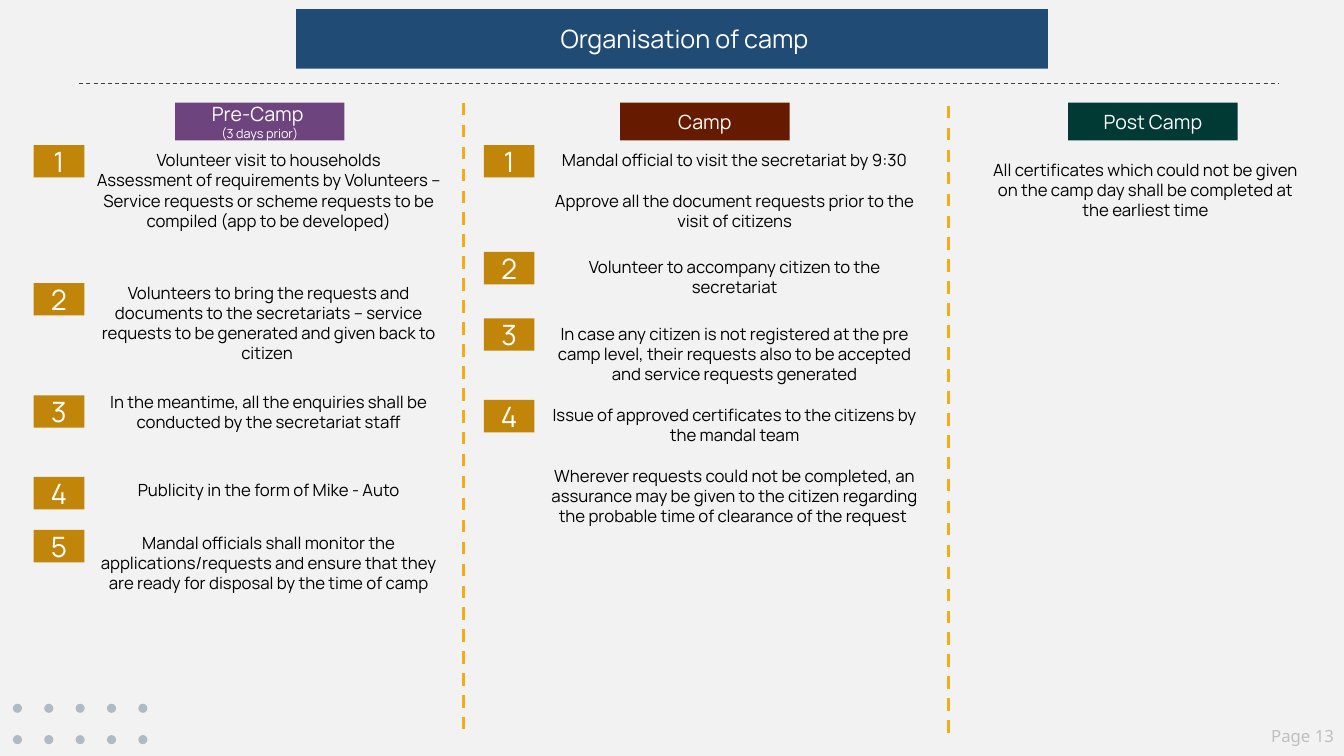
from lxml import etree
from pptx import Presentation
from pptx.dml.color import RGBColor
from pptx.enum.dml import MSO_LINE
from pptx.enum.shapes import MSO_CONNECTOR, MSO_SHAPE
from pptx.enum.text import MSO_ANCHOR, MSO_AUTO_SIZE, PP_ALIGN
from pptx.oxml.ns import qn
from pptx.util import Pt

RECTANGLE, OVAL = MSO_SHAPE.RECTANGLE, MSO_SHAPE.OVAL
STRAIGHT, DASH = MSO_CONNECTOR.STRAIGHT, MSO_LINE.DASH
MIDDLE, NO_AUTOFIT = MSO_ANCHOR.MIDDLE, MSO_AUTO_SIZE.NONE
CENTER, RIGHT = PP_ALIGN.CENTER, PP_ALIGN.RIGHT

BACKGROUND = RGBColor(0xF2, 0xF2, 0xF2)
WHITE = RGBColor(0xFF, 0xFF, 0xFF)
BLACK = RGBColor(0x00, 0x00, 0x00)
NAVY = RGBColor(0x20, 0x4B, 0x75)
PURPLE = RGBColor(0x6D, 0x44, 0x7D)
BROWN = RGBColor(0x66, 0x1B, 0x00)
GREEN = RGBColor(0x01, 0x39, 0x34)
OCHRE = RGBColor(0xC1, 0x86, 0x09)
AMBER = RGBColor(0xF4, 0xAC, 0x14)
DARK_GREY = RGBColor(0x40, 0x40, 0x40)
PAGE_GREY = RGBColor(0xBF, 0xBF, 0xBF)
DOT_BLUE = RGBColor(0x16, 0x42, 0x59)


def write(shape, lines, color, align=CENTER, font="Manrope", gap=0):
    """Fill a shape with (text, size) lines, with a gap in points between them."""
    frame = shape.text_frame
    frame.word_wrap = True
    for index, (text, size) in enumerate(lines):
        paragraph = frame.add_paragraph() if index else frame.paragraphs[0]
        paragraph.alignment = align
        paragraph.space_before = Pt(gap if index else 0)
        run = paragraph.add_run()
        run.text = text
        run.font.size = Pt(size)
        run.font.name = font
        run.font.color.rgb = color


def add_block(kind, left, top, width, height, color):
    shape = slide.shapes.add_shape(kind, Pt(left), Pt(top), Pt(width), Pt(height))
    shape.shadow.inherit = False
    shape.fill.solid()
    shape.fill.fore_color.rgb = color
    shape.line.fill.background()
    shape.text_frame.vertical_anchor = MIDDLE
    return shape


presentation = Presentation()
presentation.slide_width, presentation.slide_height = Pt(960), Pt(540)
slide = presentation.slides.add_slide(presentation.slide_layouts[5])
slide.background.fill.solid()
slide.background.fill.fore_color.rgb = BACKGROUND

# Title banner with one rounded corner
title = slide.shapes.title
title.left, title.top, title.width, title.height = Pt(211.5), Pt(6.5), Pt(537), Pt(42.5)
geometry = etree.Element(qn("a:prstGeom"), prst="round1Rect")
guides = etree.SubElement(geometry, qn("a:avLst"))
etree.SubElement(guides, qn("a:gd"), name="adj", fmla="val 29500")
title.element.spPr.insert(1, geometry)
title.fill.solid()
title.fill.fore_color.rgb = NAVY
title.text_frame.vertical_anchor = MIDDLE
title.text_frame.auto_size = NO_AUTOFIT
write(title, [("Organisation of camp", 18)], WHITE)
title_properties = title.text_frame.paragraphs[0]._p.get_or_add_pPr()
title_properties.set("marL", str(Pt(36)))
title_properties.set("indent", str(Pt(-18)))

# Dot grid in the lower left corner
for row in range(2):
    for column in range(5):
        dot = add_block(OVAL, 9.2 + 22.4 * column, 502.7 + 22.4 * row, 6.5, 6.5, DOT_BLUE)
        dot_color = dot.fill._xPr.find(qn("a:solidFill"))[0]
        etree.SubElement(dot_color, qn("a:alpha"), val="31000")

# Rule under the title and column dividers
for x1, y1, x2, y2, color, weight in [
    (56.5, 59.7, 913.5, 59.7, DARK_GREY, 0.75),
    (331, 73.4, 331, 520.5, AMBER, 2.25),
    (677.5, 75.6, 677.5, 523.4, AMBER, 2.25),
]:
    line = slide.shapes.add_connector(STRAIGHT, Pt(x1), Pt(y1), Pt(x2), Pt(y2))
    line.line.color.rgb = color
    line.line.width = Pt(weight)
    line.line.dash_style = DASH
    etree.SubElement(line._element.spPr, qn("a:effectLst"))

# Column headings
for left, color, lines in [
    (125, PURPLE, [("Pre-Camp ", 14), ("(3 days prior)", 9)]),
    (443, BROWN, [("Camp", 14)]),
    (763, GREEN, [("Post Camp", 14)]),
]:
    write(add_block(RECTANGLE, left, 73.3, 121, 27, color), lines, WHITE)

# Steps: (number top, text top, text height, paragraphs)
pre_camp = [
    (103.6, 103.6, 80, ["Volunteer visit to households",
                        "Assessment of requirements by Volunteers – Service requests or "
                        "scheme requests to be compiled (app to be developed)"]),
    (202.2, 198.3, 65.5, ["Volunteers to bring the requests and documents to the secretariats – "
                          "service requests to be generated and given back to citizen "]),
    (282.4, 276.5, 36, ["In the meantime, all the enquiries shall be conducted by the "
                        "secretariat staff"]),
    (340.7, 339.3, 21.8, ["Publicity in the form of Mike - Auto"]),
    (378.5, 376.8, 65.5, ["Mandal officials shall monitor the applications/requests and ensure "
                          "that they are ready for disposal by the time of camp"]),
]
camp = [
    (103.6, 103.6, 65.5, ["Mandal official to visit the secretariat by 9:30",
                          "Approve all the document requests prior to the visit of citizens"]),
    (180, 180, 36, ["Volunteer to accompany citizen to the secretariat"]),
    (227.4, 227.4, 51, ["In case any citizen is not registered at the pre camp level, their "
                        "requests also to be accepted and service requests generated"]),
    (285.7, 285.7, 109, ["Issue of approved certificates to the citizens by the mandal team",
                         "Wherever requests could not be completed, an assurance may be given to "
                         "the citizen regarding the probable time of clearance of the request "]),
]
post_camp = [
    (None, 110.3, 51, ["All certificates which could not be given on the camp day shall be "
                       "completed at the earliest time"]),
]
for steps, number_left, text_left, text_width, gap in [
    (pre_camp, 24, 60.3, 263.5, 0),
    (camp, 345.6, 381.8, 286, 14.5),
    (post_camp, None, 700.5, 235.5, 0),
]:
    for number, (number_top, text_top, height, texts) in enumerate(steps, 1):
        box = slide.shapes.add_textbox(Pt(text_left), Pt(text_top), Pt(text_width), Pt(height))
        write(box, [(text, 12) for text in texts], BLACK, gap=gap)
        if number_left is not None:
            badge = add_block(RECTANGLE, number_left, number_top, 36.2, 23.2, OCHRE)
            write(badge, [(str(number), 20)], WHITE)

page_number = slide.shapes.add_textbox(Pt(893), Pt(514.5), Pt(67), Pt(26.5))
write(page_number, [("Page 13", 12)], PAGE_GREY, align=RIGHT, font="Noto Sans")

presentation.save("out.pptx")
